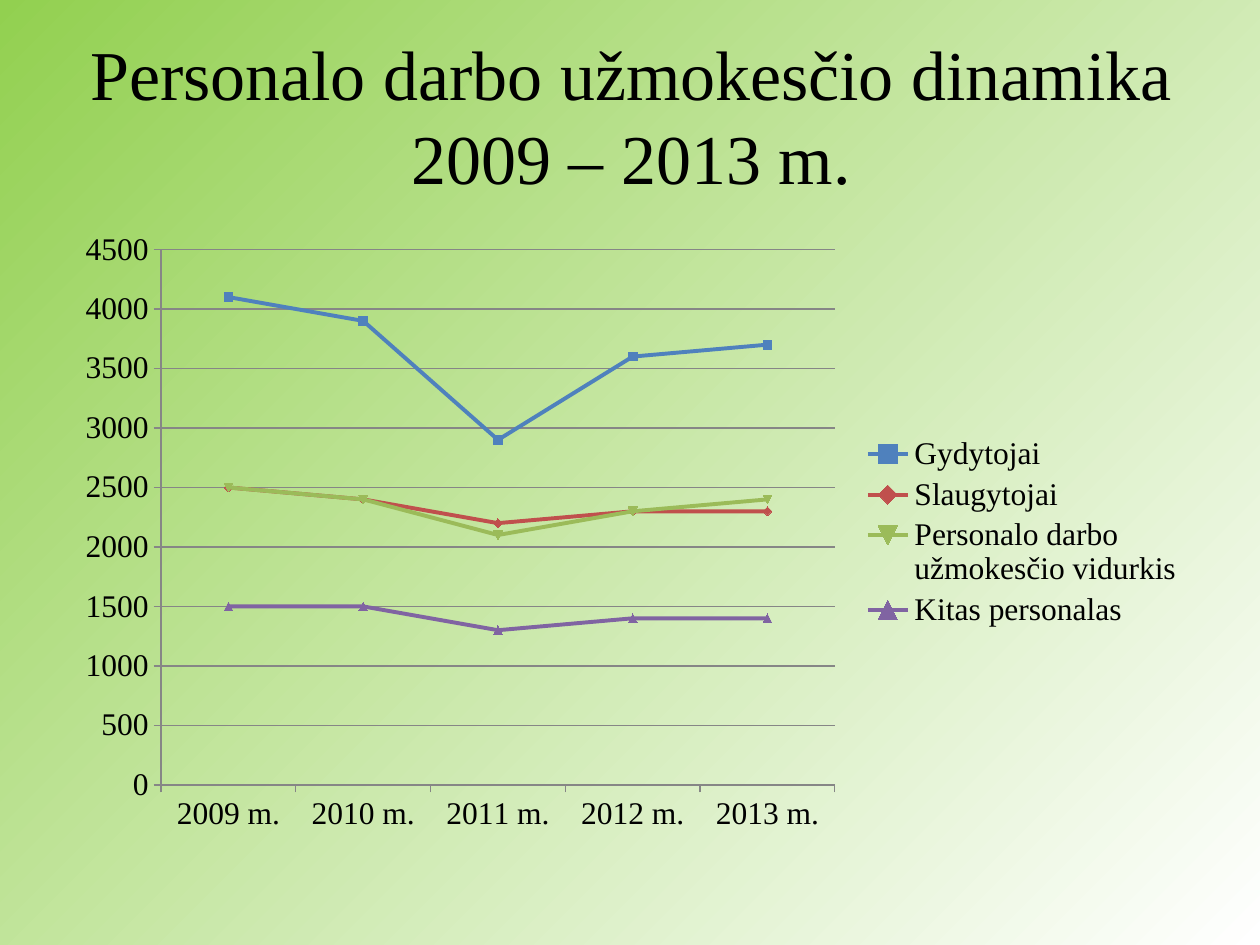
from pptx import Presentation
from pptx import util as u
from pptx.chart.data import CategoryChartData
from pptx.dml.color import RGBColor
from pptx.enum import chart as ch, text

PX = 914400 / 126
W, H = 1260, 945
FONT = "Times New Roman"
COLORS = {
    "green": "92D050", "white": "FFFFFF", "text": "000000", "grid": "868686",
    "Gydytojai": "4F81BD",
    "Slaugytojai": "C0504D",
    "Personalo darbo užmokesčio vidurkis": "9BBB59",
    "Kitas personalas": "8064A2",
}
YEARS = [f"{year} m." for year in range(2009, 2014)]
PAY = {
    "Gydytojai": (4100, 3900, 2900, 3600, 3700),
    "Slaugytojai": (2500, 2400, 2200, 2300, 2300),
    "Personalo darbo užmokesčio vidurkis": (2500, 2400, 2100, 2300, 2400),
    "Kitas personalas": (1500, 1500, 1300, 1400, 1400),
}


def px(n):
    return u.Emu(round(n * PX))


def rgb(name):
    return RGBColor.from_string(COLORS[name])


def style_font(font, size, color="text"):
    font.name, font.size, font.bold = FONT, u.Pt(size), False
    font.color.rgb = rgb(color)


def add_text(s, box, content, size=18, color="text", align=text.PP_ALIGN.CENTER,
             anchor=text.MSO_ANCHOR.MIDDLE):
    tf = s.shapes.add_textbox(*map(px, box)).text_frame
    tf.word_wrap = True
    tf.vertical_anchor = anchor
    p = tf.paragraphs[0]
    p.text = content
    p.alignment = align
    for r in p.runs:
        style_font(r.font, size, color)


def fill_background(s):
    fill = s.background.fill
    fill.gradient()
    fill.gradient_angle = 315
    for stop, name in zip(fill.gradient_stops, ("green", "white")):
        stop.color.rgb = rgb(name)


def style_axis(axis):
    style_font(axis.tick_labels.font, 18)
    axis.major_tick_mark = ch.XL_TICK_MARK.OUTSIDE
    axis.minor_tick_mark = ch.XL_TICK_MARK.NONE
    axis.format.line.color.rgb = rgb("grid")
    axis.format.line.width = u.Pt(0.75)


def add_pay_chart(s, box):
    data = CategoryChartData()
    data.categories = YEARS
    for name, values in PAY.items():
        data.add_series(name, values)
    chart = s.shapes.add_chart(ch.XL_CHART_TYPE.LINE_MARKERS, *map(px, box), data).chart
    style_font(chart.font, 18)
    chart.has_title = False

    chart.has_legend = True
    chart.legend.position = ch.XL_LEGEND_POSITION.RIGHT
    chart.legend.include_in_layout = False
    style_font(chart.legend.font, 18)

    style_axis(chart.category_axis)
    axis = chart.value_axis
    style_axis(axis)
    axis.minimum_scale, axis.maximum_scale, axis.major_unit = 0, 4500, 500
    axis.has_major_gridlines = True
    axis.major_gridlines.format.line.color.rgb = rgb("grid")
    axis.major_gridlines.format.line.width = u.Pt(0.75)

    plot = chart.plots[0]
    plot.vary_by_categories = False
    for series in plot.series:
        series.smooth = False
        series.format.line.color.rgb = rgb(series.name)
        series.format.line.width = u.Pt(2.25)
        marker = series.marker.format
        marker.fill.solid()
        marker.fill.fore_color.rgb = rgb(series.name)
        marker.line.color.rgb = rgb(series.name)


def main():
    prs = Presentation()
    prs.slide_width, prs.slide_height = px(W), px(H)
    s = prs.slides.add_slide(prs.slide_layouts[6])
    fill_background(s)
    add_text(s, (64, 36, 1134, 157),
             "Personalo darbo užmokesčio dinamika\v2009 – 2013 m.", size=40)
    add_pay_chart(s, (63, 220, 1134, 624))
    prs.save("out.pptx")


if __name__ == "__main__":
    main()
